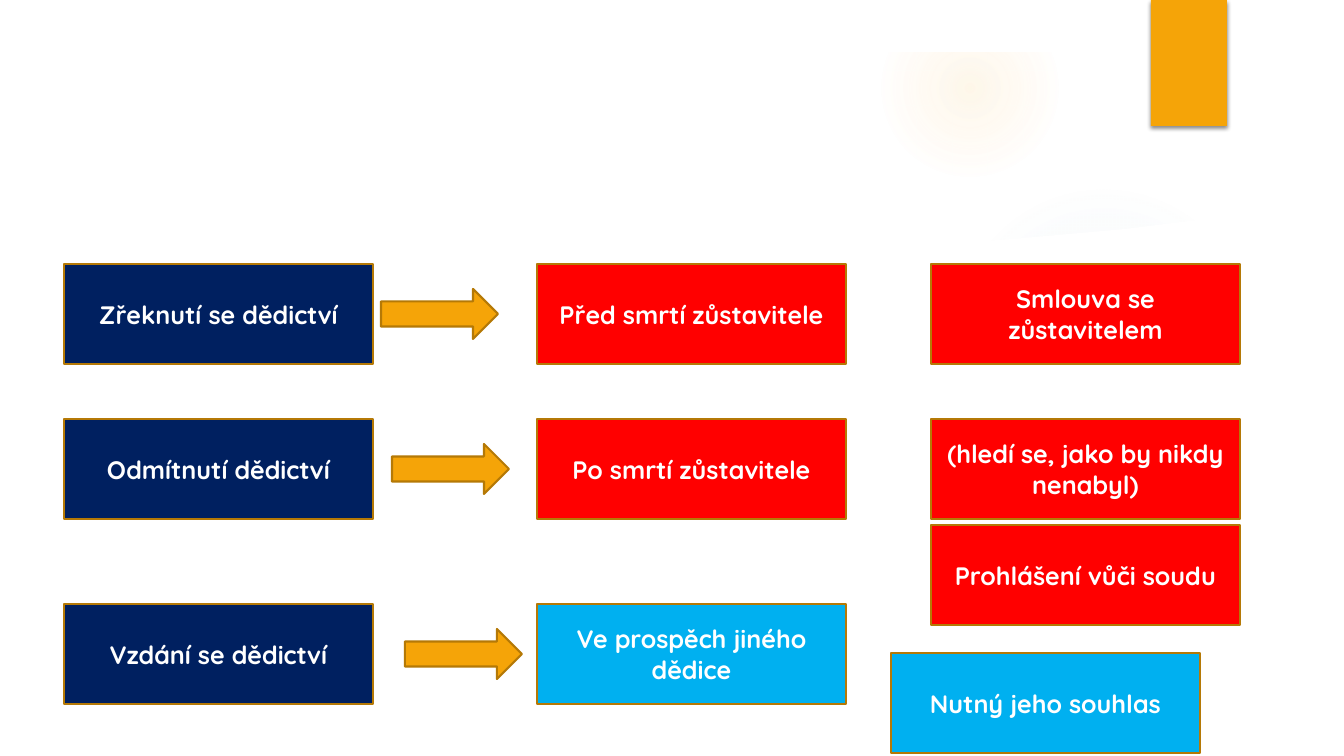
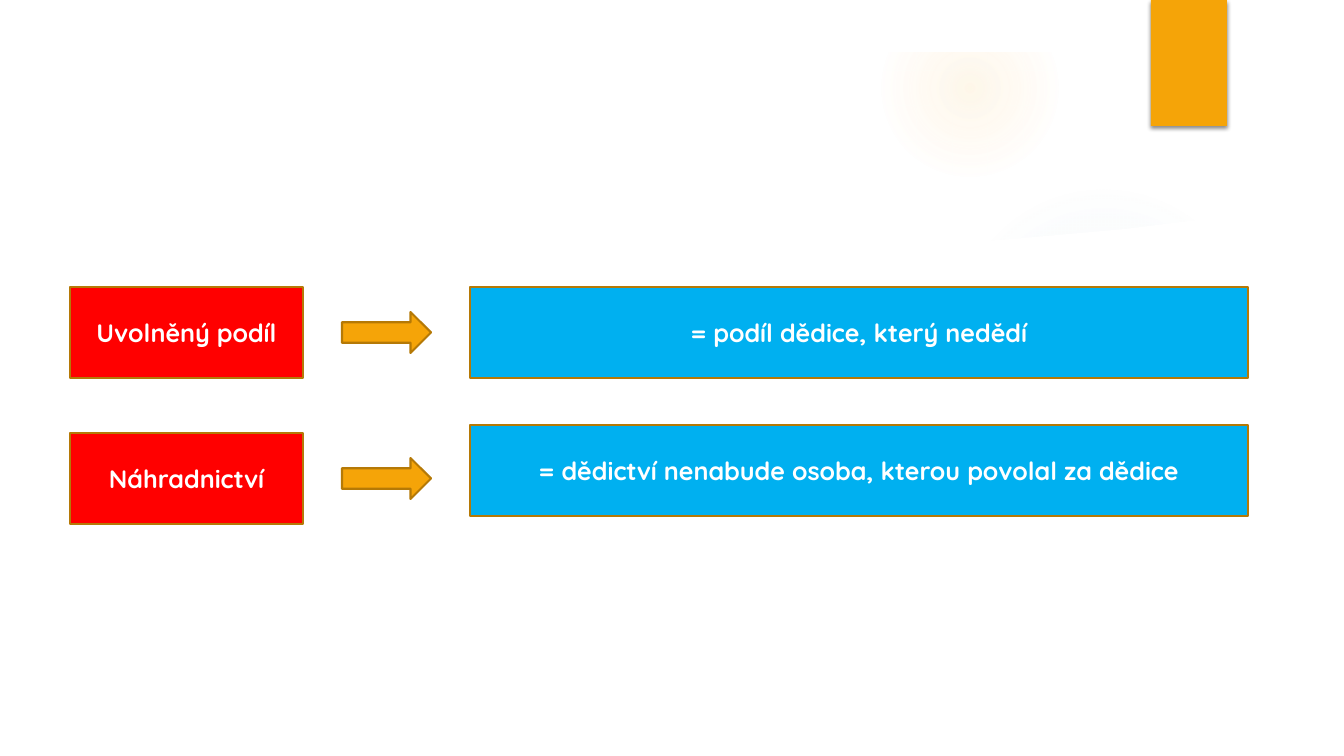
import pptx
import pptx.dml.color
import pptx.enum.shapes
import pptx.enum.text
import pptx.oxml
import pptx.oxml.ns
import pptx.util

PX = 914400 / 100.8
WIDTH, HEIGHT = 1344, 756
FONT = "Quicksand"
COLORS = {
    "white": "FFFFFF",
    "navy": "002060",
    "red": "FF0000",
    "blue": "00B0F0",
    "orange": "F5A408",
    "outline": "B57906",
    "sun": "FAC96A",
    "mist": "8EBBD2",
    "shadow": "000000",
}
SHAPE = pptx.enum.shapes.MSO_SHAPE

GLOWS = [
    ("mist", 949, 184, 310, [(0, 7), (36, 6), (69, 0)]),
    ("sun", 882, 0, 176, [(0, 14), (36, 7), (73, 0)]),
]
BAND = [(941, 252), (1050, 246), (1190, 231), (1299, 216), (1293, 167),
        (1200, 195), (1107, 218), (1018, 234), (937, 245)]
SHEET = [(50, 206), (50, 706), (1294, 706), (1294, 206), (1238, 215),
         (1181, 222), (1125, 229), (1069, 234), (1012, 239), (957, 243),
         (874, 247), (766, 249), (662, 250), (563, 248), (447, 243),
         (324, 235), (218, 226), (136, 217), (80, 210)]
TAB = (1151, 0, 76, 126)

LEFT, MIDDLE, RIGHT = 64, 537, 931
ROWS = [264, 419, 604]
SLIDES = [
    {
        "box_height": 100,
        "arrow_size": (117, 50),
        "boxes": [
            ("Zřeknutí se dědictví", "navy", LEFT, ROWS[0], 309),
            ("Před smrtí zůstavitele", "red", MIDDLE, ROWS[0], 309),
            ("Smlouva se zůstavitelem", "red", RIGHT, ROWS[0], 309),
            ("Odmítnutí dědictví", "navy", LEFT, ROWS[1], 309),
            ("Po smrtí zůstavitele", "red", MIDDLE, ROWS[1], 309),
            ("(hledí se, jako by nikdy nenabyl)", "red", RIGHT, ROWS[1], 309),
            ("Prohlášení vůči soudu", "red", RIGHT, 525, 309),
            ("Vzdání se dědictví", "navy", LEFT, ROWS[2], 309),
            ("Ve prospěch jiného dědice", "blue", MIDDLE, ROWS[2], 309),
            ("Nutný jeho souhlas", "blue", 891, 653, 309),
        ],
        "arrows": list(zip([381, 392, 405], ROWS)),
    },
    {
        "box_height": 91,
        "arrow_size": (89, 41),
        "boxes": [
            ("Uvolněný podíl", "red", 70, 287, 233),
            ("= podíl dědice, který nedědí", "blue", 470, 287, 778),
            ("Náhradnictví", "red", 70, 433, 233),
            ("= dědictví nenabude osoba, kterou povolal za dědice", "blue", 470, 425, 778),
        ],
        "arrows": [(342, 287), (342, 433)],
    },
]


def emu(px):
    return round(px * PX)


def rgb(name):
    return pptx.dml.color.RGBColor.from_string(COLORS[name])


def color_xml(name, alpha):
    return f'<a:srgbClr val="{COLORS[name]}"><a:alpha val="{alpha * 1000}"/></a:srgbClr>'


def xml(tag, attrs, body):
    ns = pptx.oxml.ns.nsdecls("a")
    return pptx.oxml.parse_xml(f"<a:{tag} {ns} {attrs}>{body}</a:{tag}>")


def paint(sp, fill, line=None):
    sp.shadow.inherit = False
    sp.fill.solid()
    sp.fill.fore_color.rgb = rgb(fill)
    if line:
        sp.line.color.rgb = rgb(line)
        sp.line.width = pptx.util.Pt(1.5)
    else:
        sp.line.fill.background()
    return sp


def replace_part(sp, tag, new):
    spPr = sp.element.spPr
    spPr.replace(spPr.find(pptx.oxml.ns.qn(tag)), new)


def add_shape(slide, kind, x, y, w, h, fill, line=None):
    sp = slide.shapes.add_shape(kind, emu(x), emu(y), emu(w), emu(h))
    return paint(sp, fill, line)


def add_outline(slide, points, fill):
    builder = slide.shapes.build_freeform(*points[0], scale=PX)
    builder.add_line_segments(points[1:], close=True)
    return paint(builder.convert_to_shape(), fill)


def write(sp, text, size=18, color="white", bold=True, font=FONT):
    tf = sp.text_frame
    tf.word_wrap = True
    tf.vertical_anchor = pptx.enum.text.MSO_ANCHOR.MIDDLE
    p = tf.paragraphs[0]
    p.alignment = pptx.enum.text.PP_ALIGN.CENTER
    r = p.add_run()
    r.text = text
    r.font.name = font
    r.font.size = pptx.util.Pt(size)
    r.font.bold = bold
    r.font.color.rgb = rgb(color)


def add_background(slide):
    parts = []
    for color, x, y, size, stops in GLOWS:
        sp = add_shape(slide, SHAPE.OVAL, x, y, size, size, color)
        gs = "".join(f'<a:gs pos="{pos * 1000}">{color_xml(color, alpha)}</a:gs>'
                     for pos, alpha in stops)
        focus = '<a:path path="circle"><a:fillToRect l="50000" t="50000" r="50000" b="50000"/></a:path>'
        replace_part(sp, "a:solidFill", xml("gradFill", 'rotWithShape="1"', f"<a:gsLst>{gs}</a:gsLst>{focus}"))
        parts.append(sp)
    band = add_outline(slide, BAND, "white")
    replace_part(band, "a:solidFill", xml("solidFill", "", color_xml("white", 20)))
    sheet = add_outline(slide, SHEET, "white")
    top_margin = add_shape(slide, SHAPE.RECTANGLE, 0, 0, WIDTH, 52, "white")
    tab = add_shape(slide, SHAPE.RECTANGLE, *TAB, "orange")
    blur, distance = pptx.util.Pt(3), pptx.util.Pt(2)
    shadow = (f'<a:outerShdw blurRad="{blur}" dist="{distance}" dir="5400000" rotWithShape="0">'
              f'{color_xml("shadow", 45)}</a:outerShdw>')
    replace_part(tab, "a:effectLst", xml("effectLst", "", shadow))
    return parts + [band, sheet, top_margin, tab]


def move_to_layout(parts, layout):
    for placeholder in list(layout.placeholders):
        layout.shapes.element.remove(placeholder.element)
    for sp in parts:
        layout.shapes.element.append(sp.element)


def add_diagram(slide, content):
    height = content["box_height"]
    arrow_w, arrow_h = content["arrow_size"]
    for text, color, x, y, width in content["boxes"]:
        sp = add_shape(slide, SHAPE.RECTANGLE, x, y, width, height, color, "outline")
        write(sp, text)
    for x, y in content["arrows"]:
        add_shape(slide, SHAPE.RIGHT_ARROW, x, y + (height - arrow_h) / 2,
                  arrow_w, arrow_h, "orange", "outline")


def main():
    prs = pptx.Presentation()
    prs.slide_width, prs.slide_height = emu(WIDTH), emu(HEIGHT)
    layout = prs.slide_layouts[6]
    slides = [prs.slides.add_slide(layout) for _ in SLIDES]
    move_to_layout(add_background(slides[0]), layout)
    for slide, content in zip(slides, SLIDES):
        add_diagram(slide, content)
    prs.save("out.pptx")


if __name__ == "__main__":
    main()
